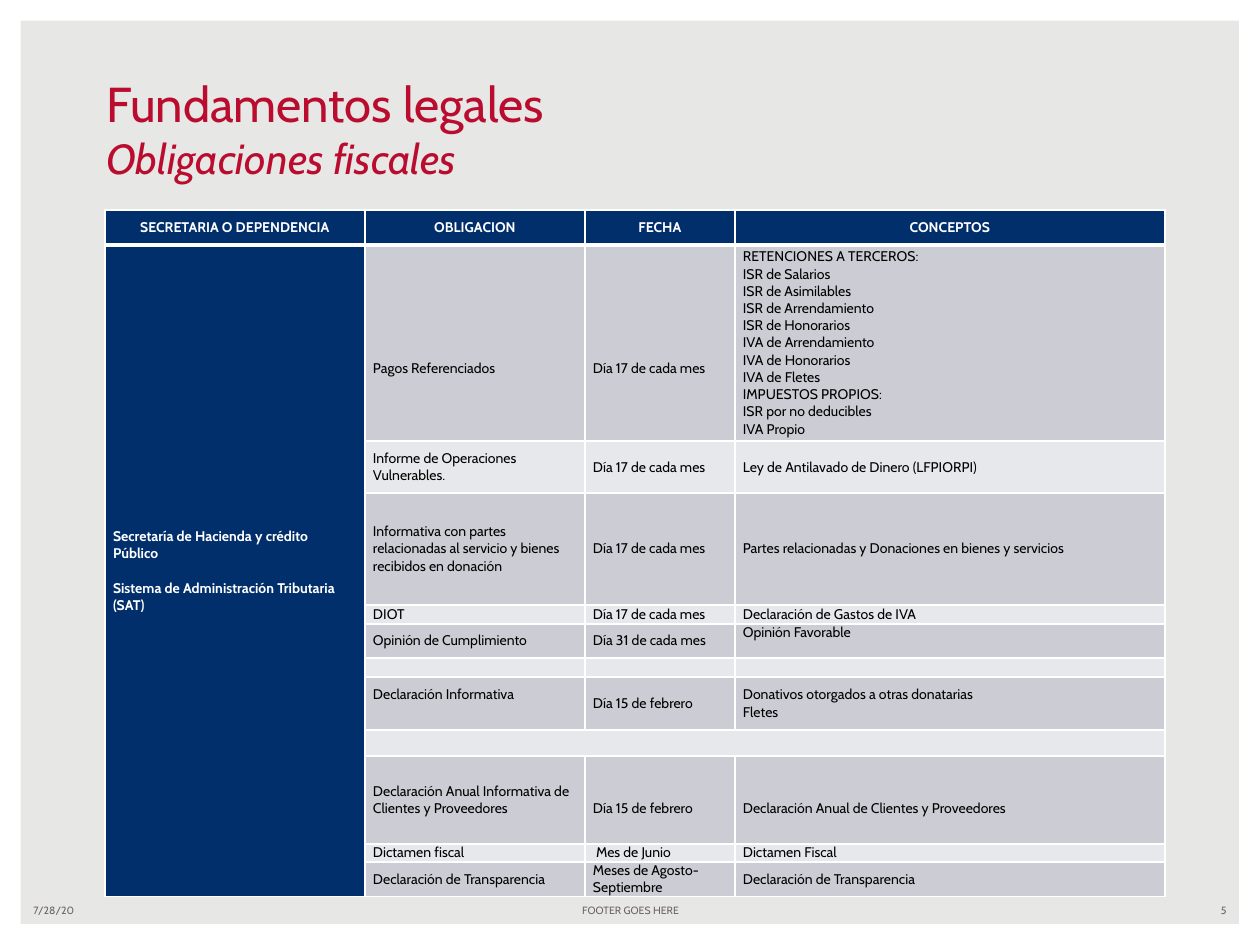
import dataclasses

import lxml.etree
import pptx
import pptx.dml.color
import pptx.enum.shapes
import pptx.enum.text
import pptx.oxml.ns
import pptx.util

ALIGN = pptx.enum.text.PP_ALIGN
MIDDLE = pptx.enum.text.MSO_ANCHOR.MIDDLE
BOTTOM = pptx.enum.text.MSO_ANCHOR.BOTTOM
EMU_PER_PX = 914400 / 126
LINE = 17  # height of one line of table text, px


@dataclasses.dataclass(frozen=True)
class Theme:
    font: str = "Cabin"
    background: str = "E7E7E5"
    white: str = "FFFFFF"
    black: str = "000000"
    red: str = "BA0C2F"
    navy: str = "002F6C"
    gray: str = "6C6463"
    bands: tuple = ("CCCDD4", "E7E8EB")
    title: int = 28
    subtitle: int = 24
    body: int = 8
    footer: int = 6


def px(length):
    return pptx.util.Emu(round(length * EMU_PER_PX))


def rgb(color):
    return pptx.dml.color.RGBColor.from_string(color)


class SlideBuilder:
    def __init__(self, slide, theme):
        self.slide = slide
        self.theme = theme
        slide.background.fill.solid()
        slide.background.fill.fore_color.rgb = rgb(theme.background)

    def format_text(self, frame, size, color, bold=False, align=ALIGN.LEFT):
        for paragraph in frame.paragraphs:
            paragraph.alignment = align
            for run in paragraph.runs:
                run.font.name = self.theme.font
                run.font.size = pptx.util.Pt(size)
                run.font.bold = bold
                run.font.color.rgb = rgb(color)

    def frame(self, thickness):
        """Draw the white border around the whole slide."""
        border = self.slide.shapes.add_shape(
            pptx.enum.shapes.MSO_SHAPE.FRAME, 0, 0, px(1260), px(945))
        border.adjustments[0] = thickness
        border.shadow.inherit = False
        border.fill.solid()
        border.fill.fore_color.rgb = rgb(self.theme.white)
        border.line.fill.background()

    def text(self, box, words, size, color, align=ALIGN.LEFT, anchor=MIDDLE):
        frame = self.slide.shapes.add_textbox(*map(px, box)).text_frame
        frame.word_wrap = True
        frame.vertical_anchor = anchor
        frame.text = words
        self.format_text(frame, size, color, align=align)
        return frame

    def title(self, box, heading, subheading):
        frame = self.text(box, f"{heading}\v{subheading}", self.theme.title,
                          self.theme.red, anchor=BOTTOM)
        second = frame.paragraphs[0].runs[1].font
        second.size = pptx.util.Pt(self.theme.subtitle)
        second.italic = True

    def table(self, left, top, widths, heights):
        table = self.slide.shapes.add_table(
            len(heights), len(widths), px(left), px(top),
            px(sum(widths)), px(sum(heights))).table
        table.horz_banding = False
        for column, width in zip(table.columns, widths):
            column.width = px(width)
        for row, height in zip(table.rows, heights):
            row.height = px(height)
        return table

    def cell(self, cell, words, fill, color, bold=False, align=ALIGN.LEFT,
             shift=0, thick=""):
        """Fill one cell; shift (px) lowers the text, thick names 3 pt sides."""
        cell.margin_left = cell.margin_right = px(8)
        cell.margin_top, cell.margin_bottom = px(max(shift, 0)), px(max(-shift, 0))
        cell.vertical_anchor = MIDDLE
        cell.fill.solid()
        cell.fill.fore_color.rgb = rgb(fill)
        self.borders(cell, thick)
        cell.text_frame.text = words
        self.format_text(cell.text_frame, self.theme.body, color, bold, align)
        if not words:
            # An empty cell takes its height from the end-of-paragraph size.
            lxml.etree.SubElement(
                cell.text_frame.paragraphs[0]._p, pptx.oxml.ns.qn("a:endParaRPr"),
                sz=str(self.theme.body * 100))

    def borders(self, cell, thick):
        qn = pptx.oxml.ns.qn
        properties = cell._tc.get_or_add_tcPr()
        for index, side in enumerate("LRTB"):
            points = 3 if side in thick else 1
            line = lxml.etree.Element(qn(f"a:ln{side}"),
                                      w=str(pptx.util.Pt(points)))
            solid = lxml.etree.SubElement(line, qn("a:solidFill"))
            lxml.etree.SubElement(solid, qn("a:srgbClr"), val=self.theme.white)
            properties.insert(index, line)


HEADINGS = ("SECRETARIA O DEPENDENCIA", "OBLIGACION", "FECHA", "CONCEPTOS")
AGENCY = ("Secretaría de Hacienda y crédito Público\n"
          "Sistema de Administración Tributaria\n(SAT)")
MONTHLY = "Día 17 de cada mes"
FEBRUARY = "Día 15 de febrero"
REFERENCED = """RETENCIONES A TERCEROS:
ISR de Salarios
ISR de Asimilables
ISR de Arrendamiento
ISR de Honorarios
IVA de Arrendamiento
IVA de Honorarios
IVA de Fletes
IMPUESTOS PROPIOS:
ISR por no deducibles
IVA Propio"""

# Row height, the three texts, and how far each text is moved down, in lines.
OBLIGATIONS = [
    (196, ("Pagos Referenciados", MONTHLY, REFERENCED), (3, 3, 0)),
    (52, ("Informe de Operaciones Vulnerables.", MONTHLY,
          "Ley de Antilavado de Dinero (LFPIORPI)"), (0, 0, 0)),
    (112, ("Informativa con partes relacionadas al servicio y bienes "
           "recibidos en donación", MONTHLY,
           "Partes relacionadas y Donaciones en bienes y servicios"), (0, 0, 0)),
    (19, ("DIOT", MONTHLY, "Declaración de Gastos de IVA"), (0, 0, 0)),
    (34, ("Opinión de Cumplimiento", "Día 31 de cada mes",
          "Opinión Favorable"), (0, 0, -1)),
    (19, ("", "", ""), (0, 0, 0)),
    (53, ("Declaración Informativa", FEBRUARY,
          "Donativos otorgados a otras donatarias\nFletes"), (-1, 0, 0)),
    (26, ("", "", ""), (0, 0, 0)),
    (88, ("Declaración Anual Informativa de Clientes y Proveedores", FEBRUARY,
          "Declaración Anual de Clientes y Proveedores"), (0, 1, 1)),
    (18, ("Dictamen fiscal", " Mes de Junio", "Dictamen Fiscal"), (0, 0, 0)),
    (35, ("Declaración de Transparencia", "Meses de Agosto- Septiembre",
          "Declaración de Transparencia"), (0, 0, 0)),
]
MERGED_ROW = 8


def add_obligations(builder):
    theme = builder.theme
    heights = [35] + [height for height, _, _ in OBLIGATIONS]
    table = builder.table(105, 210, (260, 220, 150, 430), heights)
    for column, heading in enumerate(HEADINGS):
        builder.cell(table.cell(0, column), heading, theme.navy, theme.white,
                     bold=True, align=ALIGN.CENTER, thick="B")
    for row, (_, texts, shifts) in enumerate(OBLIGATIONS, start=1):
        thick = "T" if row == 1 else ""
        builder.cell(table.cell(row, 0), AGENCY if row == 1 else "",
                     theme.navy, theme.white, bold=True, thick=thick)
        band = theme.bands[(row - 1) % 2]
        for column, (words, lines) in enumerate(zip(texts, shifts), start=1):
            builder.cell(table.cell(row, column), words, band, theme.black,
                         shift=lines * LINE, thick=thick)
    agency = table.cell(1, 0)
    agency.text_frame.paragraphs[1].space_before = pptx.util.Pt(10)
    agency.merge(table.cell(len(OBLIGATIONS), 0))
    table.cell(MERGED_ROW, 1).merge(table.cell(MERGED_ROW, 3))


def main():
    deck = pptx.Presentation()
    deck.slide_width, deck.slide_height = px(1260), px(945)
    theme = Theme()
    builder = SlideBuilder(deck.slides.add_slide(deck.slide_layouts[6]), theme)
    builder.frame(0.022)
    for left, width, words, align in (
            (21, 294, "7/28/20", ALIGN.LEFT),
            (431, 399, "FOOTER GOES HERE", ALIGN.CENTER),
            (945, 294, "5", ALIGN.RIGHT)):
        builder.text((left, 898, width, 25), words, theme.footer, theme.gray, align)
    builder.title((94, 66, 1071, 123), "Fundamentos legales", "Obligaciones fiscales")
    add_obligations(builder)
    deck.save("out.pptx")


if __name__ == "__main__":
    main()
